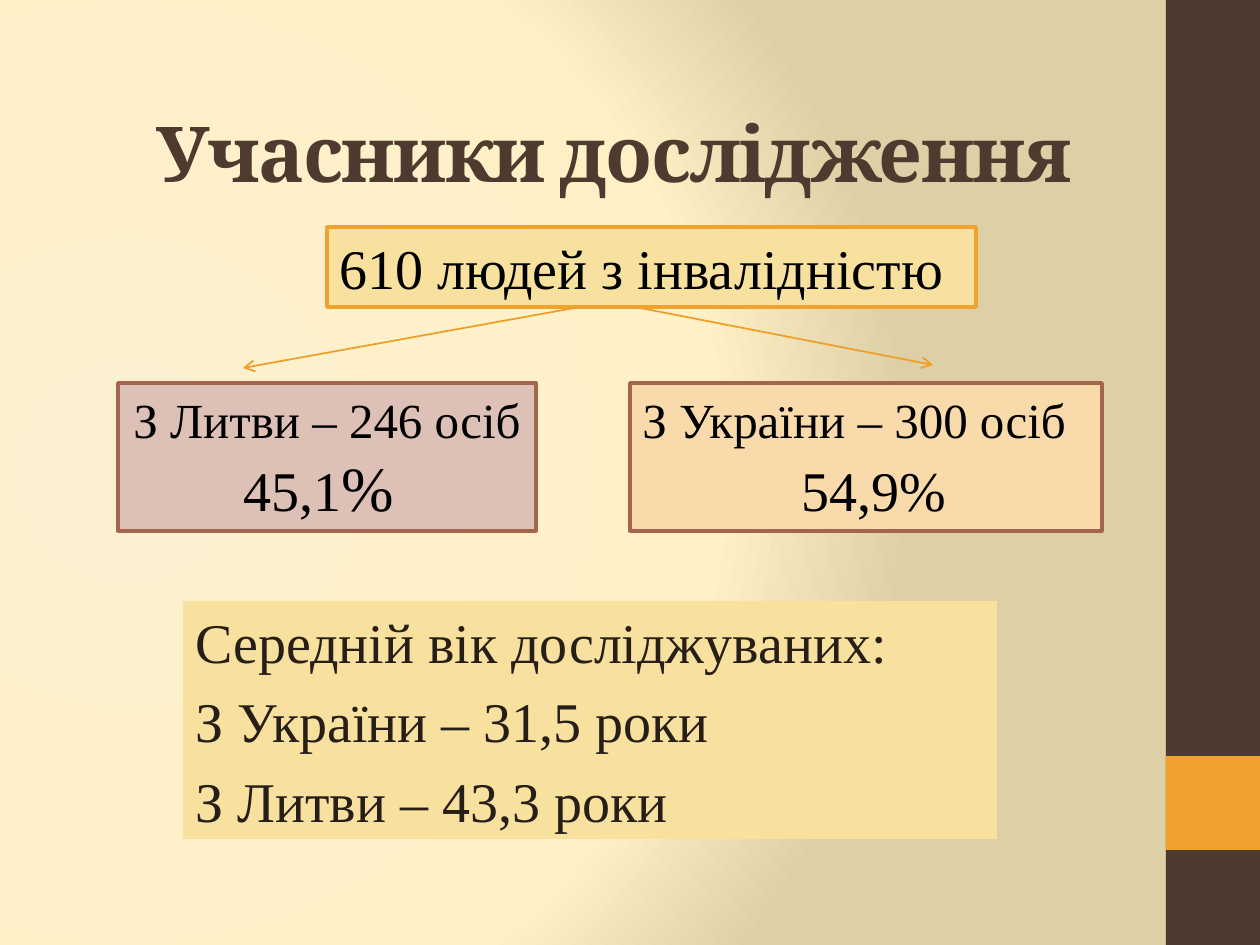
from lxml import etree
from pptx import Presentation
from pptx.dml.color import RGBColor
from pptx.enum.shapes import MSO_CONNECTOR, MSO_SHAPE
from pptx.enum.text import MSO_ANCHOR, PP_ALIGN
from pptx.oxml import parse_xml
from pptx.oxml.ns import qn
from pptx.util import Pt

LEFT, CENTER = PP_ALIGN.LEFT, PP_ALIGN.CENTER
TOP, BOTTOM = MSO_ANCHOR.TOP, MSO_ANCHOR.BOTTOM
RECT, STRAIGHT = MSO_SHAPE.RECTANGLE, MSO_CONNECTOR.STRAIGHT
NS = "http://schemas.openxmlformats.org/drawingml/2006/main"
PX = 914400 / 126
W, H = 1260, 945
SERIF = "Times New Roman"

COLORS = {
    "brown": "4E3B30", "orange": "F0A22E", "arrow": "EF9F28",
    "yellow": "F8E19F", "rose": "DDC0B6", "peach": "F9DAAB",
    "rust": "A5644E", "ink": "271E18", "black": "000000",
}
BACKGROUND = [(0, "FBF0CF"), (75, "FFF0C5"), (100, "DDCFA6")]
SIDEBAR = [((1166, 0, 94, H), "brown"), ((1166, 756, 94, 94), "orange")]

# Each paragraph is (alignment, [(text, size), ...]).
TITLE = [(CENTER, [("Учасники дослідження", 44)])]
AGES = [(LEFT, [(line, 32)]) for line in (
    "Середній вік досліджуваних:",
    "З України – 31,5 роки",
    "З Литви – 43,3 роки",
)]
GROUPS = [
    ((327, 227, 649, 80), "yellow", "orange", True,
     [(LEFT, [("610 людей з інвалідністю", 32)])]),
    ((118, 383, 418, 148), "rose", "rust", False,
     [(CENTER, [("З Литви – 246 осіб", 28)]),
      (CENTER, [("45,1", 32), ("% ", 36)])]),
    ((630, 383, 472, 148), "peach", "rust", True,
     [(LEFT, [("З України – 300 осіб", 28)]),
      (CENTER, [(" ", 36), ("54,9%", 32)])]),
]
ARROWS = [((635, 307), (933, 365)), ((580, 307), (243, 368))]


def emu(*lengths):
    return [round(v * PX) for v in lengths]


def rgb(name):
    return RGBColor.from_string(COLORS[name])


def paint_background(s):
    s.background.fill.gradient()
    old = s.element.find(".//" + qn("a:gradFill"))
    stops = "".join(
        f'<a:gs pos="{pos * 1000}"><a:srgbClr val="{color}"/></a:gs>'
        for pos, color in BACKGROUND)
    old.getparent().replace(old, parse_xml(
        f'<a:gradFill xmlns:a="{NS}" rotWithShape="1"><a:gsLst>{stops}</a:gsLst>'
        '<a:path path="circle"><a:fillToRect l="20000" t="50000" r="100000" b="50000"/>'
        '</a:path></a:gradFill>'))


def add_box(s, box, fill, line=None):
    sp = s.shapes.add_shape(RECT, *emu(*box))
    sp.shadow.inherit = False
    sp.fill.solid()
    sp.fill.fore_color.rgb = rgb(fill)
    if line:
        sp.line.color.rgb = rgb(line)
        sp.line.width = Pt(2)
    else:
        sp.line.fill.background()
    return sp


def write(sp, paragraphs, font=SERIF, color="black", bold=False, before=0,
          spacing=0, anchor=TOP, wrap=True):
    tf = sp.text_frame
    tf.word_wrap = wrap
    tf.vertical_anchor = anchor
    for i, (align, runs) in enumerate(paragraphs):
        p = tf.add_paragraph() if i else tf.paragraphs[0]
        p.alignment = align
        p.space_before = Pt(before)
        for text, size in runs:
            r = p.add_run()
            r.text = text
            r.font.name = font
            r.font.size = Pt(size)
            r.font.bold = bold
            r.font.color.rgb = rgb(color)
            if spacing:
                r.font._element.set("spc", str(spacing * 100))


def add_arrow(s, start, end):
    line = s.shapes.add_connector(STRAIGHT, *emu(*start, *end))
    line.line.color.rgb = rgb("arrow")
    line.line.width = Pt(1)
    etree.SubElement(line.line._get_or_add_ln(), qn("a:tailEnd"), type="arrow")
    etree.SubElement(line._element.spPr, qn("a:effectLst"))


def main():
    prs = Presentation()
    prs.slide_width, prs.slide_height = emu(W, H)
    s = prs.slides.add_slide(prs.slide_layouts[6])
    paint_background(s)
    for box, fill in SIDEBAR:
        add_box(s, box, fill)

    title = s.shapes.add_textbox(*emu(94, 86, 1040, 118))
    write(title, TITLE, font="Cambria", color="brown", bold=True,
          spacing=-1, anchor=BOTTOM)
    write(add_box(s, (183, 601, 814, 238), "yellow"), AGES,
          color="ink", before=7)
    for box, fill, line, wrap, paragraphs in GROUPS:
        write(add_box(s, box, fill, line), paragraphs, wrap=wrap)
    for start, end in ARROWS:
        add_arrow(s, start, end)
    prs.save("out.pptx")


if __name__ == "__main__":
    main()
